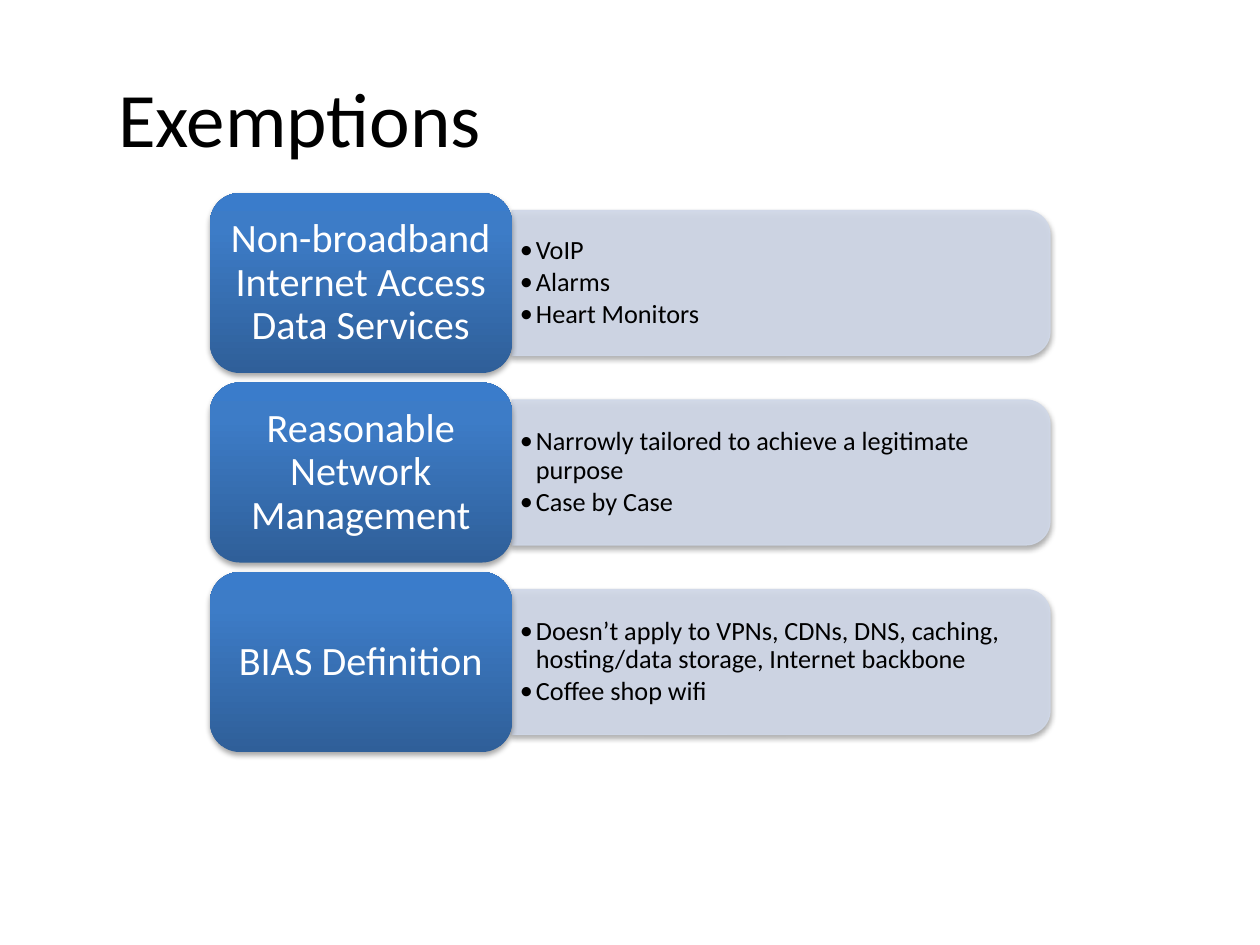
from copy import deepcopy

from lxml.etree import SubElement
from pptx import Presentation
from pptx.dml.color import RGBColor
from pptx.enum.shapes import MSO_SHAPE as SHAPE
from pptx.enum.text import MSO_ANCHOR as ANCHOR, PP_ALIGN as ALIGN
from pptx.oxml.ns import qn
from pptx.util import Pt

TITLE = "Exemptions"
ROWS = [
    ("Non-broadband Internet Access Data Services",
     ["VoIP", "Alarms", "Heart Monitors"]),
    ("Reasonable Network Management",
     ["Narrowly tailored to achieve a legitimate purpose", "Case by Case"]),
    ("BIAS Definition",
     ["Doesn’t apply to VPNs, CDNs, DNS, caching, hosting/data storage, "
      "Internet backbone", "Coffee shop wifi"]),
]
COLORS = {"text": "000000", "label": "FFFFFF", "panel": "D0D8E8",
          "shadow": "000000"}
BLUES = [(0, "2F5F99"), (0.8, "3D7CC7"), (1, "3A7CCB")]
FONT = "Calibri"

LEFT, TOP, PITCH = 210, 193, 189.5
CARD_W, CARD_H = 302, 180
PANEL_W, PANEL_H = 538, 145
TEXT_W, TEXT_H = 530, 130
INDENT = 16


def px(n):
    return round(n * 914400 / 126)


def rgb(name):
    return RGBColor.from_string(COLORS[name])


def set_font(para, size, color):
    para.font.name, para.font.size = FONT, Pt(size)
    para.font.color.rgb = rgb(color)


def set_frame(frame, side, edge):
    frame.word_wrap = True
    frame.vertical_anchor = ANCHOR.MIDDLE
    frame.margin_left = frame.margin_right = px(side)
    frame.margin_top = frame.margin_bottom = px(edge)


def set_alpha(fill, percent):
    """Make a solid fill element partly transparent."""
    SubElement(fill[0], qn("a:alpha"), val=str(percent * 1000))


def add_shadow(shape):
    shape.shadow.inherit = False
    effects = shape._element.spPr.find(qn("a:effectLst"))
    outer = SubElement(effects, qn("a:outerShdw"), blurRad="40000",
                       dist="23000", dir="5400000", rotWithShape="0")
    color = SubElement(outer, qn("a:srgbClr"), val=COLORS["shadow"])
    SubElement(color, qn("a:alpha"), val="35000")


def add_panel(shapes, mid):
    """Draw an upright tab turned so that its round end faces right."""
    center = LEFT + CARD_W + PANEL_W / 2
    panel = shapes.add_shape(
        SHAPE.ROUND_2_SAME_RECTANGLE, px(center - PANEL_H / 2),
        px(mid - PANEL_W / 2), px(PANEL_H), px(PANEL_W))
    panel.rotation = 90
    for fill in (panel.fill, panel.line.fill):
        fill.solid()
        fill.fore_color.rgb = rgb("panel")
    panel.line.width = Pt(0.75)
    props = panel._element.spPr
    for solid in list(props.iter(qn("a:solidFill"))):
        set_alpha(solid, 90)
    add_shadow(panel)


def add_points(shapes, points, mid):
    box = shapes.add_textbox(px(LEFT + CARD_W), px(mid - TEXT_H / 2),
                             px(TEXT_W), px(TEXT_H))
    frame = box.text_frame
    set_frame(frame, 8, 4)
    frame.text = "\n".join(points)
    for para in frame.paragraphs:
        para.line_spacing, para.space_after = 0.9, Pt(2.25)
        props = para._p.get_or_add_pPr()
        props.set("marL", str(px(INDENT)))
        props.set("indent", str(-px(INDENT)))
        SubElement(props, qn("a:buFont"), typeface=FONT)
        SubElement(props, qn("a:buChar"), char="•")
        set_font(para, 15, "text")


def add_card(shapes, label, mid):
    card = shapes.add_shape(SHAPE.ROUNDED_RECTANGLE, px(LEFT),
                            px(mid - CARD_H / 2), px(CARD_W), px(CARD_H))
    card.fill.gradient()
    card.fill.gradient_angle = 90
    stops = card._element.spPr.find(".//" + qn("a:gsLst"))
    stops.append(deepcopy(stops[-1]))
    for stop, (place, color) in zip(card.fill.gradient_stops, BLUES):
        stop.position = place
        stop.color.rgb = RGBColor.from_string(color)
    card.line.fill.background()
    add_shadow(card)
    set_frame(card.text_frame, 10, 6)
    para = card.text_frame.paragraphs[0]
    para.text = label
    para.alignment, para.line_spacing = ALIGN.CENTER, 0.9
    set_font(para, 23, "label")


def main():
    deck = Presentation()
    deck.slide_width, deck.slide_height = px(1260), px(945)
    shapes = deck.slides.add_slide(deck.slide_layouts[6]).shapes

    title = shapes.add_textbox(px(105), px(38), px(1113), px(158))
    set_frame(title.text_frame, 13, 6)
    title.text_frame.text = TITLE
    set_font(title.text_frame.paragraphs[0], 44, "text")

    for i, (label, points) in enumerate(ROWS):
        mid = TOP + i * PITCH + CARD_H / 2
        add_panel(shapes, mid)
        add_points(shapes, points, mid)
        add_card(shapes, label, mid)

    deck.save("out.pptx")


if __name__ == "__main__":
    main()
